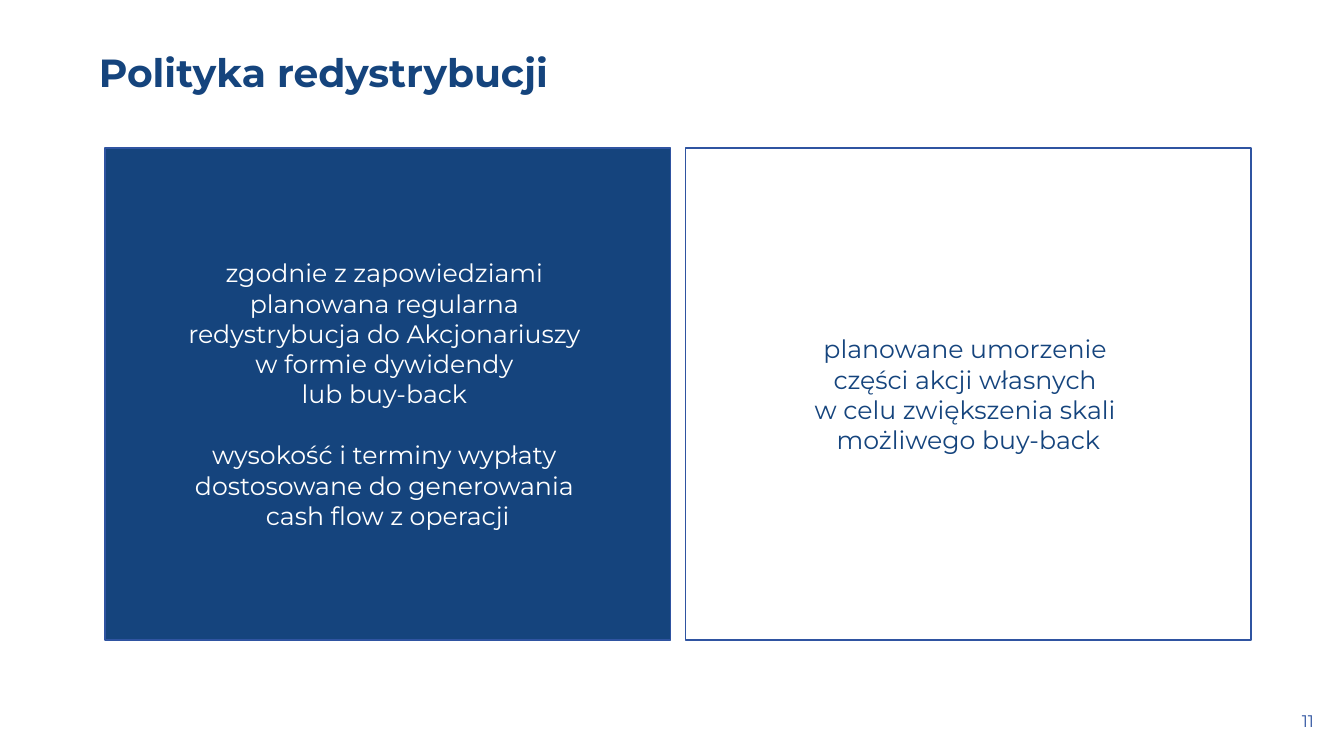
from pptx import Presentation
from pptx.dml.color import RGBColor
from pptx.enum import shapes, text
from pptx.util import Inches, Pt

FONT = "Montserrat"
NAVY = RGBColor(0x15, 0x44, 0x7D)
BLUE = RGBColor(0x2F, 0x54, 0xA1)
WHITE = RGBColor(0xFF, 0xFF, 0xFF)

PANEL_LEFT, PANEL_TOP = 1.04, 1.47
PANEL_WIDTH, PANEL_HEIGHT = 5.61, 4.88
PANEL_GAP = 0.15
GROUP_SPACE = Pt(22)

DIVIDEND_GROUPS = [
    [
        "zgodnie z zapowiedziami ",
        "planowana regularna ",
        "redystrybucja do Akcjonariuszy \nw formie dywidendy ",
        "lub buy-back ",
    ],
    [
        "wysokość i terminy wypłaty ",
        "dostosowane do generowania ",
        "cash flow z operacji",
    ],
]
BUYBACK_GROUPS = [
    [
        "planowane umorzenie ",
        "części akcji własnych ",
        "w celu zwiększenia skali ",
        "możliwego buy-back",
    ],
]


def add_span(para, words, size, color, bold=False):
    span = para.add_run()
    span.text = words
    span.font.name = FONT
    span.font.size = Pt(size)
    span.font.color.rgb = color
    span.font.bold = bold


def set_title(page, words):
    title = page.shapes.title
    title.left, title.top = Inches(0.88), Inches(0.48)
    title.width, title.height = Inches(11.53), Inches(0.52)
    frame = title.text_frame
    frame.word_wrap = True
    frame.auto_size = text.MSO_AUTO_SIZE.NONE
    frame.vertical_anchor = text.MSO_ANCHOR.MIDDLE
    para = frame.paragraphs[0]
    para.alignment = text.PP_ALIGN.LEFT
    para.line_spacing = 0.9
    add_span(para, words, 28, NAVY, bold=True)


def add_panel(page, column, groups, color, fill=None):
    """Add a framed panel; each group of lines is set apart by a space."""
    left = PANEL_LEFT + column * (PANEL_WIDTH + PANEL_GAP)
    panel = page.shapes.add_shape(
        shapes.MSO_SHAPE.RECTANGLE, Inches(left), Inches(PANEL_TOP),
        Inches(PANEL_WIDTH), Inches(PANEL_HEIGHT))
    panel.shadow.inherit = False
    panel.line.color.rgb = BLUE
    panel.line.width = Pt(1)
    if fill is None:
        panel.fill.background()
    else:
        panel.fill.solid()
        panel.fill.fore_color.rgb = fill

    frame = panel.text_frame
    frame.word_wrap = True
    frame.vertical_anchor = text.MSO_ANCHOR.MIDDLE
    para = None
    for group in groups:
        for position, words in enumerate(group):
            first = para is None
            para = frame.paragraphs[0] if first else frame.add_paragraph()
            para.alignment = text.PP_ALIGN.CENTER
            if position == 0 and not first:
                para.space_before = GROUP_SPACE
            for index, line in enumerate(words.split("\n")):
                if index:
                    para.add_line_break()
                add_span(para, line, 18, color)


def add_page_number(page, number):
    box = page.shapes.add_textbox(
        Inches(10.13), Inches(6.95), Inches(3), Inches(0.4))
    frame = box.text_frame
    frame.word_wrap = True
    frame.vertical_anchor = text.MSO_ANCHOR.MIDDLE
    para = frame.paragraphs[0]
    para.alignment = text.PP_ALIGN.RIGHT
    add_span(para, number, 12, BLUE)


def main():
    deck = Presentation()
    deck.slide_width, deck.slide_height = Inches(13.33), Inches(7.5)
    page = deck.slides.add_slide(deck.slide_layouts.get_by_name("Title Only"))
    set_title(page, "Polityka redystrybucji")
    add_panel(page, 0, DIVIDEND_GROUPS, WHITE, fill=NAVY)
    add_panel(page, 1, BUYBACK_GROUPS, NAVY)
    add_page_number(page, "11")
    deck.save("out.pptx")


if __name__ == "__main__":
    main()
